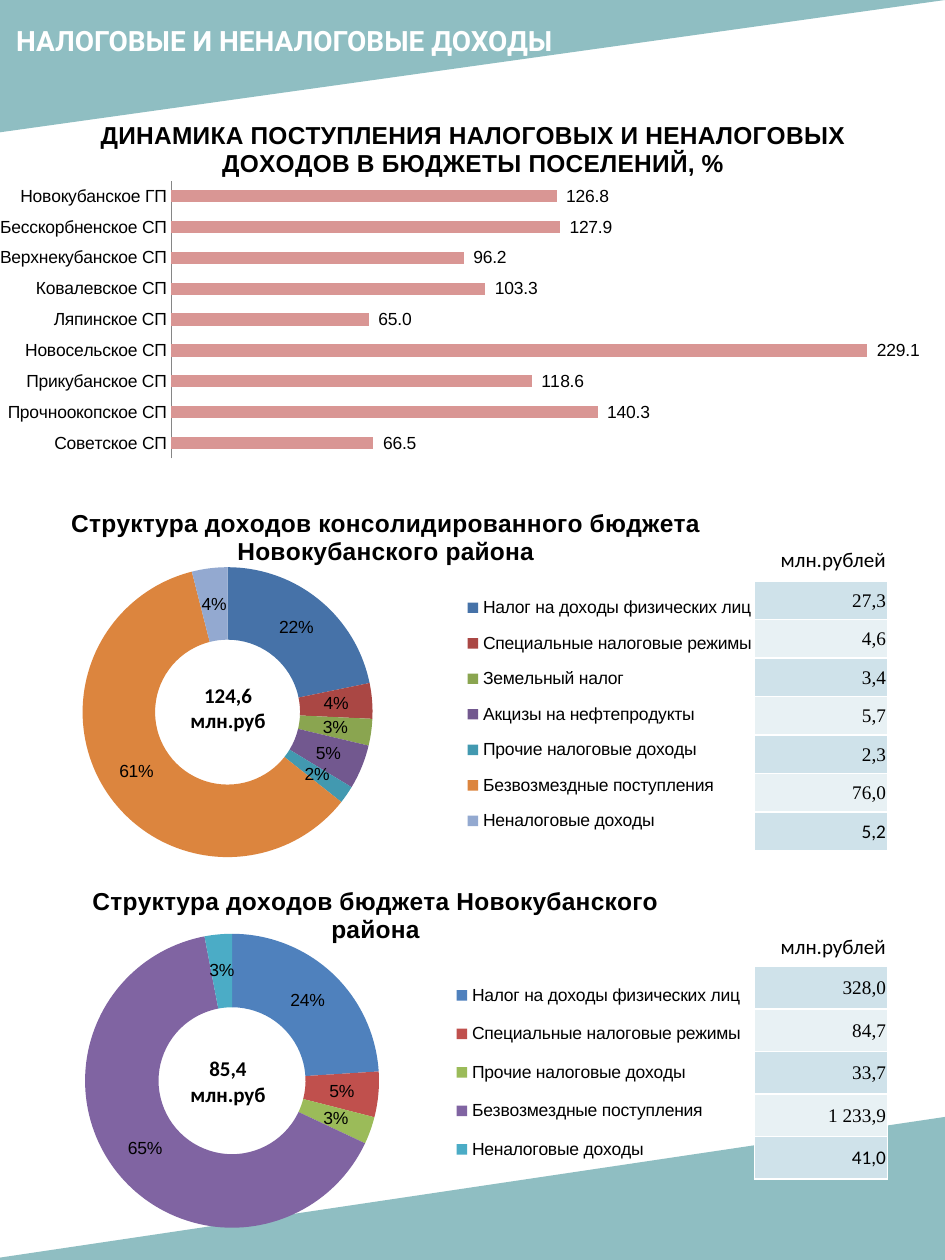
from lxml import etree
from pptx import Presentation
from pptx.chart.data import CategoryChartData
from pptx.dml.color import RGBColor
from pptx.enum.chart import (XL_CHART_TYPE, XL_LABEL_POSITION,
                             XL_LEGEND_POSITION, XL_TICK_MARK)
from pptx.enum.shapes import MSO_SHAPE
from pptx.enum.text import MSO_ANCHOR, MSO_AUTO_SIZE, PP_ALIGN
from pptx.oxml import parse_xml
from pptx.oxml.ns import nsdecls, qn
from pptx.util import Pt

BAR, RING = XL_CHART_TYPE.BAR_CLUSTERED, XL_CHART_TYPE.DOUGHNUT
OUTSIDE = XL_LABEL_POSITION.OUTSIDE_END
LEGEND_RIGHT = XL_LEGEND_POSITION.RIGHT
NO_TICK = XL_TICK_MARK.NONE
TRIANGLE = MSO_SHAPE.RIGHT_TRIANGLE
TOP, MIDDLE = MSO_ANCHOR.TOP, MSO_ANCHOR.MIDDLE
NO_FIT = MSO_AUTO_SIZE.NONE
LEFT, CENTER, RIGHT = PP_ALIGN.LEFT, PP_ALIGN.CENTER, PP_ALIGN.RIGHT

WHITE = RGBColor(0xFF, 0xFF, 0xFF)
BLACK = RGBColor(0, 0, 0)
TEAL = RGBColor(0x51, 0x9A, 0xA0)
PINK = RGBColor(0xD9, 0x96, 0x94)
GRAY = RGBColor(0x86, 0x86, 0x86)
BANDS = [RGBColor(0xCF, 0xE2, 0xEA), RGBColor(0xE8, 0xF1, 0xF4)]
DEEP = [RGBColor.from_string(c) for c in (
    "4672A8", "AA4744", "8AA550", "72588F", "4299B0", "DC853E", "93A9D0")]
BRIGHT = [RGBColor.from_string(c) for c in (
    "4F81BD", "C0504D", "9BBB59", "8064A2", "4BACC6")]

INCOME, SPECIAL = "Налог на доходы физических лиц", "Специальные налоговые режимы"
OTHER, GRANTS = "Прочие налоговые доходы", "Безвозмездные поступления"
NONTAX = "Неналоговые доходы"

TOWNS = {
    "Новокубанское ГП": 126.8, "Бесскорбненское СП": 127.9,
    "Верхнекубанское СП": 96.2, "Ковалевское СП": 103.3,
    "Ляпинское СП": 65.0, "Новосельское СП": 229.1,
    "Прикубанское СП": 118.6, "Прочноокопское СП": 140.3,
    "Советское СП": 66.5,
}
REGION = {INCOME: 22, SPECIAL: 4, "Земельный налог": 3,
          "Акцизы на нефтепродукты": 5, OTHER: 2, GRANTS: 61, NONTAX: 4}
DISTRICT = {INCOME: 24, SPECIAL: 5, OTHER: 3, GRANTS: 65, NONTAX: 3}


def place(parent, index, box, inner=False):
    """Give a plot area or legend a fixed box, in fractions of the chart."""
    for old in parent.findall(qn("c:layout")):
        parent.remove(old)
    layout = parse_xml(f"<c:layout {nsdecls('c')}><c:manualLayout/></c:layout>")
    marks = [("layoutTarget", "inner")] if inner else []
    marks += [("xMode", "edge"), ("yMode", "edge"), *zip("xywh", box)]
    for tag, val in marks:
        etree.SubElement(layout[0], qn("c:" + tag)).set("val", str(val))
    parent.insert(index, layout)


class Page:
    def __init__(self, deck):
        self.slide = deck.slides.add_slide(deck.slide_layouts[5])
        self.shapes = self.slide.shapes

    def style(self, font, name, size, color=BLACK, bold=False):
        font.name, font.size, font.bold = name, Pt(size), bold
        font.color.rgb = color

    def wedge(self, box, flip):
        shape = self.shapes.add_shape(TRIANGLE, *map(Pt, box))
        shape.rotation = 180
        shape.element.spPr.find(qn("a:xfrm")).set(flip, "1")
        shape.shadow.inherit = False
        shape.fill.solid()
        shape.fill.fore_color.rgb = TEAL
        color = shape.element.spPr.find(".//" + qn("a:srgbClr"))
        etree.SubElement(color, qn("a:alpha")).set("val", "64000")
        shape.line.fill.background()

    def title(self, text, box):
        title = self.shapes.title
        title.left, title.top, title.width, title.height = map(Pt, box)
        frame = title.text_frame
        frame.text = text
        frame.vertical_anchor, frame.auto_size = TOP, NO_FIT
        line = frame.paragraphs[0]
        line.alignment = LEFT
        self.style(line.font, "Roboto", 16, WHITE, True)
        title.element.getparent().append(title.element)  # bring to front

    def text(self, text, box, align=LEFT, bold=False):
        frame = self.shapes.add_textbox(*map(Pt, box)).text_frame
        frame.word_wrap = True
        frame.text = text
        for line in frame.paragraphs:
            line.alignment = align
            self.style(line.font, "Calibri", 12, BLACK, bold)

    def table(self, values, top, step):
        count = len(values)
        table = self.shapes.add_table(count, 1, Pt(431), Pt(top), Pt(76),
                                      Pt(step * count)).table
        table.first_row = table.horz_banding = False
        for i, value in enumerate(values):
            table.rows[i].height = Pt(step)
            cell = table.cell(i, 0)
            cell.text = value
            cell.vertical_anchor = MIDDLE
            cell.margin_left = cell.margin_right = cell.margin_top = Pt(0.72)
            cell.margin_bottom = 0
            line = cell.text_frame.paragraphs[0]
            line.alignment = RIGHT
            name = "Calibri" if i == count - 1 else "Times New Roman"
            self.style(line.font, name, 11)
            cell.fill.solid()
            cell.fill.fore_color.rgb = BANDS[i % 2]
            props = cell._tc.get_or_add_tcPr()
            for j, side in enumerate("LRTB"):
                props.insert(j, parse_xml(
                    f'<a:ln{side} {nsdecls("a")} w="{Pt(0.96)}"><a:solidFill>'
                    f'<a:srgbClr val="{WHITE}"/></a:solidFill></a:ln{side}>'))

    def chart(self, kind, title, data, box, plot, form):
        source = CategoryChartData()
        source.categories = list(data)
        source.add_series("Доходы", list(data.values()))
        chart = self.shapes.add_chart(kind, *map(Pt, box), source).chart
        self.style(chart.font, "Arial", 10)
        root = chart.element
        root.find(qn("c:chart")).addnext(parse_xml(
            f"<c:spPr {nsdecls('c', 'a')}><a:noFill/>"
            "<a:ln><a:noFill/></a:ln></c:spPr>"))
        chart.has_title = True
        frame = chart.chart_title.text_frame
        frame.text = title
        self.style(frame.paragraphs[0].font, "Arial", 14, BLACK, True)
        place(root.find(".//" + qn("c:plotArea")), 0, plot, True)
        chart.has_legend = False
        chart.plots[0].has_data_labels = True
        labels = chart.plots[0].data_labels
        labels.show_value, labels.show_percentage = True, False
        labels.number_format, labels.number_format_is_linked = form, False
        self.style(labels.font, "Arial", 10)
        return chart

    def bars(self, title, data, box, plot):
        chart = self.chart(BAR, title, data, box, plot, r"#\ ##0.0")
        bars = chart.plots[0]
        bars.gap_width, bars.overlap = 150, -25
        bars.vary_by_categories = False
        bars.data_labels.position = OUTSIDE
        fill = bars.series[0].format.fill
        fill.solid()
        fill.fore_color.rgb = PINK
        cats, scale = chart.category_axis, chart.value_axis
        cats.reverse_order = True
        cats.major_tick_mark = cats.minor_tick_mark = NO_TICK
        cats.format.line.color.rgb = GRAY
        cats.format.line.width = Pt(1)
        scale.minimum_scale, scale.maximum_scale = 0, 250
        scale.has_major_gridlines = scale.visible = False

    def ring(self, title, data, colors, box, plot, key):
        chart = self.chart(RING, title, data, box, plot, '0"%"')
        chart.plots[0].vary_by_categories = True
        for i, color in enumerate(colors):
            look = chart.plots[0].series[0].points[i].format
            look.fill.solid()
            look.fill.fore_color.rgb = color
            look.line.fill.background()
        chart.has_legend = True
        legend = chart.legend
        legend.position, legend.include_in_layout = LEGEND_RIGHT, False
        self.style(legend.font, "Arial", 10)
        place(chart.element.find(".//" + qn("c:legend")), 1, key)


def main():
    deck = Presentation()
    deck.slide_width, deck.slide_height = Pt(540), Pt(720)
    page = Page(deck)
    page.wedge((0, 0, 540, 75.6), "flipH")
    page.wedge((-9.4, 638, 550.8, 82), "flipV")
    page.title("НАЛОГОВЫЕ И НЕНАЛОГОВЫЕ ДОХОДЫ", (2, 10, 325, 45))
    for top in (309, 530):
        page.text("млн.рублей", (439, top, 95, 21.8))
    page.table(["27,3", "4,6", "3,4", "5,7", "2,3", "76,0", "5,2"], 332, 22)
    page.table(["328,0", "84,7", "33,7", "1 233,9", "41,0"], 552.2, 24.3)
    page.bars("ДИНАМИКА ПОСТУПЛЕНИЯ НАЛОГОВЫХ И НЕНАЛОГОВЫХ ДОХОДОВ "
              "В БЮДЖЕТЫ ПОСЕЛЕНИЙ, %", TOWNS, (0, 57.6, 540, 213),
              (0.18, 0.215, 0.805, 0.745))
    page.ring("Структура доходов консолидированного бюджета "
              "Новокубанского района", REGION, DEEP, (-12, 279.4, 465, 213),
              (0.127, 0.21, 0.357, 0.778), (0.59, 0.25, 0.37, 0.71))
    page.text("124,6\nмлн.руб", (98.6, 386.6, 63.4, 36), CENTER, True)
    page.ring("Структура доходов бюджета Новокубанского района", DISTRICT,
              BRIGHT, (2.2, 495.4, 424.8, 219.6),
              (0.109, 0.174, 0.396, 0.765), (0.6, 0.26, 0.4, 0.55))
    page.text("85,4\nмлн.руб", (98.6, 599.8, 63.4, 36), CENTER, True)
    deck.save("out.pptx")


if __name__ == "__main__":
    main()
